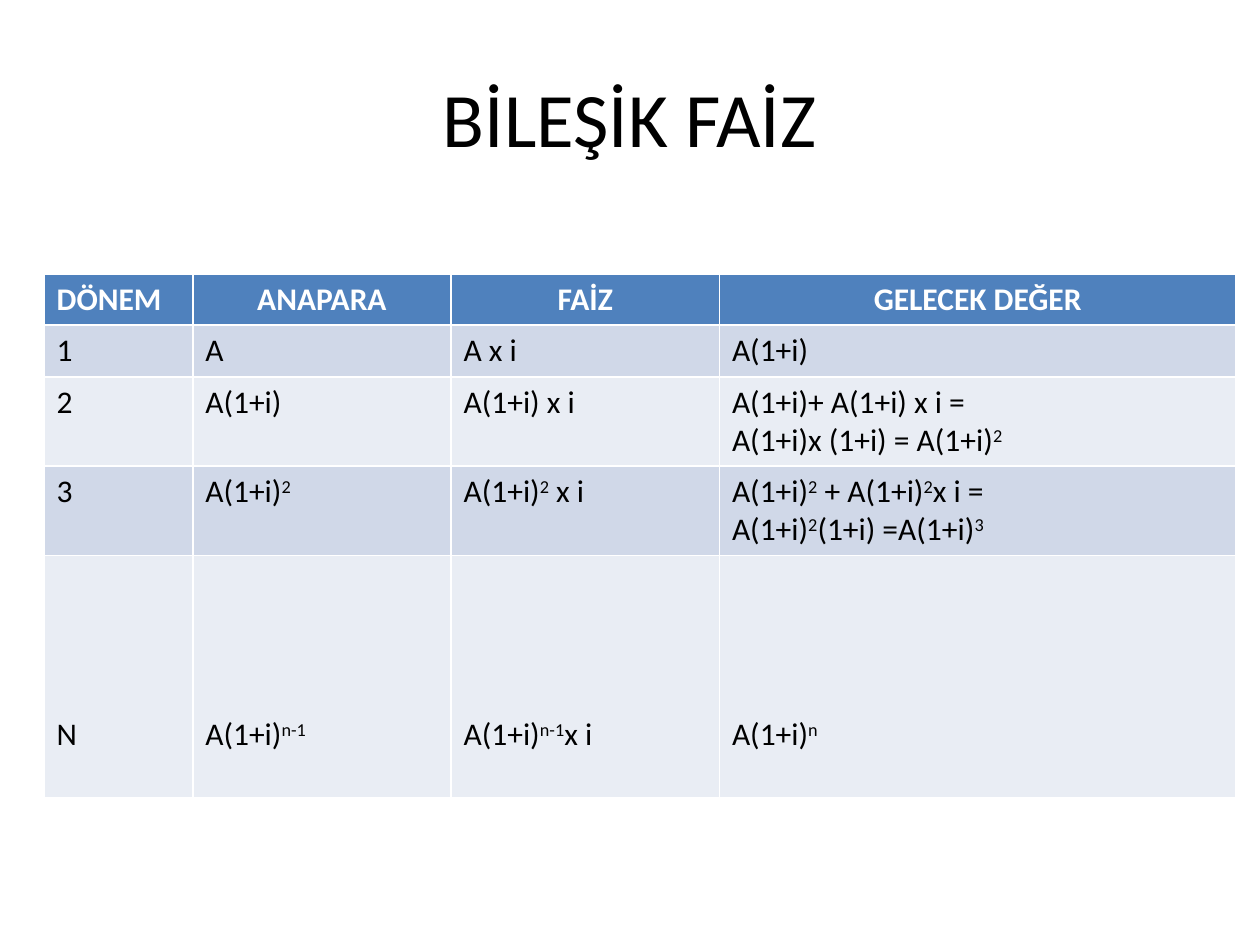
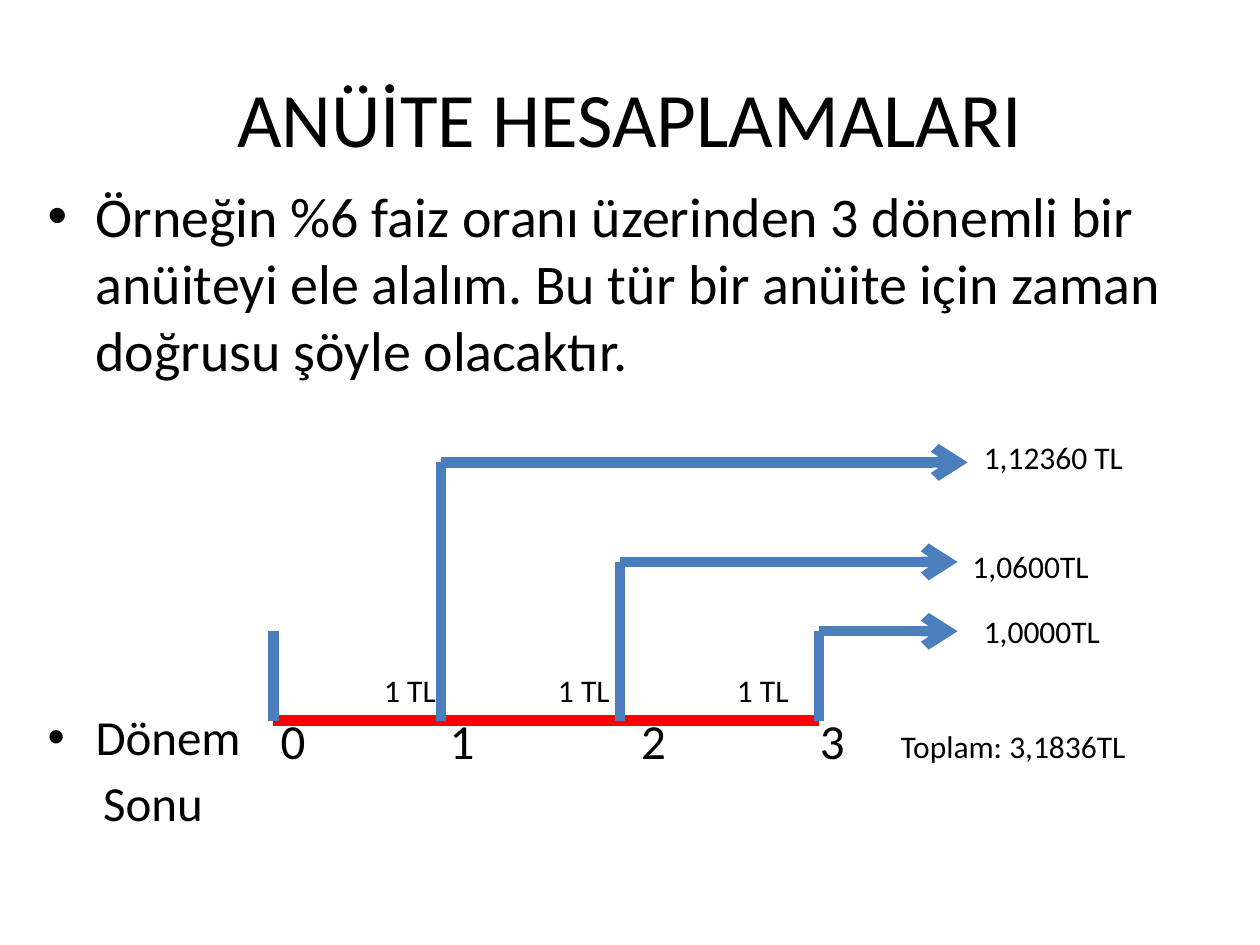
from typing import NamedTuple

from lxml.etree import SubElement
from pptx import Presentation
from pptx.dml.color import RGBColor
from pptx.enum.shapes import MSO_CONNECTOR
from pptx.enum.text import MSO_ANCHOR, PP_ALIGN
from pptx.oxml.ns import qn
from pptx.util import Emu, Pt

SCALE = 9144
BLACK = RGBColor(0x00, 0x00, 0x00)
WHITE = RGBColor(0xFF, 0xFF, 0xFF)
HEAD = RGBColor(0x4F, 0x81, 0xBD)
DARK = RGBColor(0xD0, 0xD8, 0xE8)
PALE = RGBColor(0xE9, 0xED, 0xF4)
BLUE = RGBColor(0x4B, 0x7E, 0xBC)
RED = RGBColor(0xFF, 0x00, 0x00)

FONT = {"name": "Calibri", "bold": False}
TITLE = {"alignment": PP_ALIGN.CENTER}


class Row(NamedTuple):
    high: int
    cells: tuple[str, ...]
    top: int = 5


class Label(NamedTuple):
    left: int
    top: int
    wide: int
    text: str
    size: int = 18


class Line(NamedTuple):
    x1: int
    y1: int
    x2: int
    y2: int
    color: RGBColor = BLUE
    arrow: bool = False


class Item(NamedTuple):
    text: str
    size: int
    gap: int
    left: int
    dot: bool


class Flow(NamedTuple):
    x: int
    top: int
    end: int


WIDTHS = (118, 205, 213, 410)
ROWS = (
    Row(40, ("DÖNEM", "ANAPARA", "FAİZ", "GELECEK DEĞER")),
    Row(41, ("1", "A", "A x i", "A(1+i)")),
    Row(71, ("2", "A(1+i)", "A(1+i) x i",
             "A(1+i)+ A(1+i) x i =\nA(1+i)x (1+i) = A(1+i)^2")),
    Row(71, ("3", "A(1+i)^2", "A(1+i)^2^ x i",
             "A(1+i)^2^ + A(1+i)^2^x i =\nA(1+i)^2^(1+i) =A(1+i)^3")),
    Row(192, ("N", "A(1+i)^n-1", "A(1+i)^n-1^x i", "A(1+i)^n"), 127),
)

ITEMS = (
    Item("Örneğin %6 faiz oranı üzerinden 3 dönemli bir anüiteyi ele alalım. "
         "Bu tür bir anüite için zaman doğrusu şöyle olacaktır.", 32, 0, 38, True),
    Item("Dönem", 28, 185, 38, True),
    Item("Sonu", 28, 4, 44, False),
)
BASE, START = 572, 217
FLOWS = (Flow(350, 367, 768), Flow(492, 446, 760), Flow(650, 501, 760))
TICKS = [Label(x, 559, 50, str(i), 28) for i, x in enumerate((213, 347, 499, 641))]
LABELS = (
    Label(705, 572, 230, "Toplam: 3,1836TL"),
    Label(771, 343, 150, "1,12360 TL"),
    Label(762, 429, 150, "1,0600TL"),
    Label(771, 481, 150, "1,0000TL"),
    *(Label(x, 528, 79, "1 TL") for x in (295, 433, 575)),
)


def px(n: int) -> Emu:
    """Turn px into EMU."""
    return Emu(n * SCALE)


def apply(thing: object, form: dict) -> None:
    """Set each format value on the given object."""
    for key, val in form.items():
        setattr(thing, key, val)


def write(para, text: str, size: int, color: RGBColor = BLACK, **form) -> None:
    """Write text in which carets switch raised runs on and off."""
    for i, part in enumerate(text.split("^")):
        if part:
            run = para.add_run()
            run.text = part
            apply(run.font, {**FONT, "size": Pt(size), **form})
            run.font.color.rgb = color
            if i % 2:
                run._r.get_or_add_rPr().set("baseline", "30000")


def add_box(slide, left: int, top: int, wide: int, high: int):
    """Add a wrapping text box and return its frame."""
    frame = slide.shapes.add_textbox(px(left), px(top), px(wide), px(high)).text_frame
    frame.word_wrap = True
    return frame


def add_title(slide, text: str) -> None:
    """Add the shared slide title."""
    frame = add_box(slide, 50, 30, 900, 125)
    frame.vertical_anchor = MSO_ANCHOR.MIDDLE
    apply(frame.paragraphs[0], TITLE)
    write(frame.paragraphs[0], text, 44)


def add_label(slide, label: Label) -> None:
    """Add one short label."""
    frame = add_box(slide, label.left, label.top, label.wide, 40)
    write(frame.paragraphs[0], label.text, label.size)


def add_line(slide, line: Line) -> None:
    """Add one thick line, with an arrowhead if asked for."""
    ends = [px(n) for n in line[:4]]
    link = slide.shapes.add_connector(MSO_CONNECTOR.STRAIGHT, *ends)
    link.line.color.rgb = line.color
    link.line.width = Pt(6)
    if line.arrow:
        SubElement(link.line._get_or_add_ln(), qn("a:tailEnd"), type="arrow")
    SubElement(link._element.spPr, qn("a:effectLst"))


def add_items(slide) -> None:
    """Add the body text with its bullets."""
    frame = add_box(slide, 28, 139, 945, 591)
    for i, item in enumerate(ITEMS):
        para = frame.add_paragraph() if i else frame.paragraphs[0]
        para.space_before = Pt(item.gap)
        write(para, item.text, item.size)
        props = para._p.get_or_add_pPr()
        props.set("marL", str(px(item.left)))
        if item.dot:
            props.set("indent", str(px(-item.left)))
            SubElement(props, qn("a:buFont"), typeface="Arial")
            SubElement(props, qn("a:buChar"), char="•")


def add_grid(slide) -> None:
    """Add the table of compound interest."""
    high = sum(row.high for row in ROWS)
    table = slide.shapes.add_table(len(ROWS), len(WIDTHS), px(35), px(218),
                                   px(sum(WIDTHS)), px(high)).table
    for col, wide in zip(table.columns, WIDTHS):
        col.width = px(wide)
    for r, row in enumerate(ROWS):
        table.rows[r].height = px(row.high)
        for c, text in enumerate(row.cells):
            cell = table.cell(r, c)
            cell.margin_top = px(row.top)
            cell.fill.solid()
            cell.fill.fore_color.rgb = (DARK if r % 2 else PALE) if r else HEAD
            for i, part in enumerate(text.split("\n")):
                frame = cell.text_frame
                para = frame.add_paragraph() if i else frame.paragraphs[0]
                if not r and c:
                    para.alignment = PP_ALIGN.CENTER
                write(para, part, 18, BLACK if r else WHITE, bold=not r)


def add_time(slide) -> None:
    """Add the time line with its ticks, payments and sums."""
    for tick in TICKS:
        add_label(slide, tick)
    add_line(slide, Line(START, BASE, FLOWS[-1].x, BASE, RED))
    add_line(slide, Line(START, BASE, START, FLOWS[-1].top))
    for x, top, end in FLOWS:
        add_line(slide, Line(x, BASE, x, top))
        add_line(slide, Line(x, top, end, top, arrow=True))
    for label in LABELS:
        add_label(slide, label)


def main() -> None:
    """Build both slides and save them."""
    deck = Presentation()
    apply(deck, {"slide_width": px(1000), "slide_height": px(750)})
    pages = (
        ("BİLEŞİK FAİZ", (add_grid,)),
        ("ANÜİTE HESAPLAMALARI", (add_items, add_time)),
    )
    for title, parts in pages:
        slide = deck.slides.add_slide(deck.slide_layouts[6])
        add_title(slide, title)
        for part in parts:
            part(slide)
    deck.save("out.pptx")


if __name__ == "__main__":
    main()
